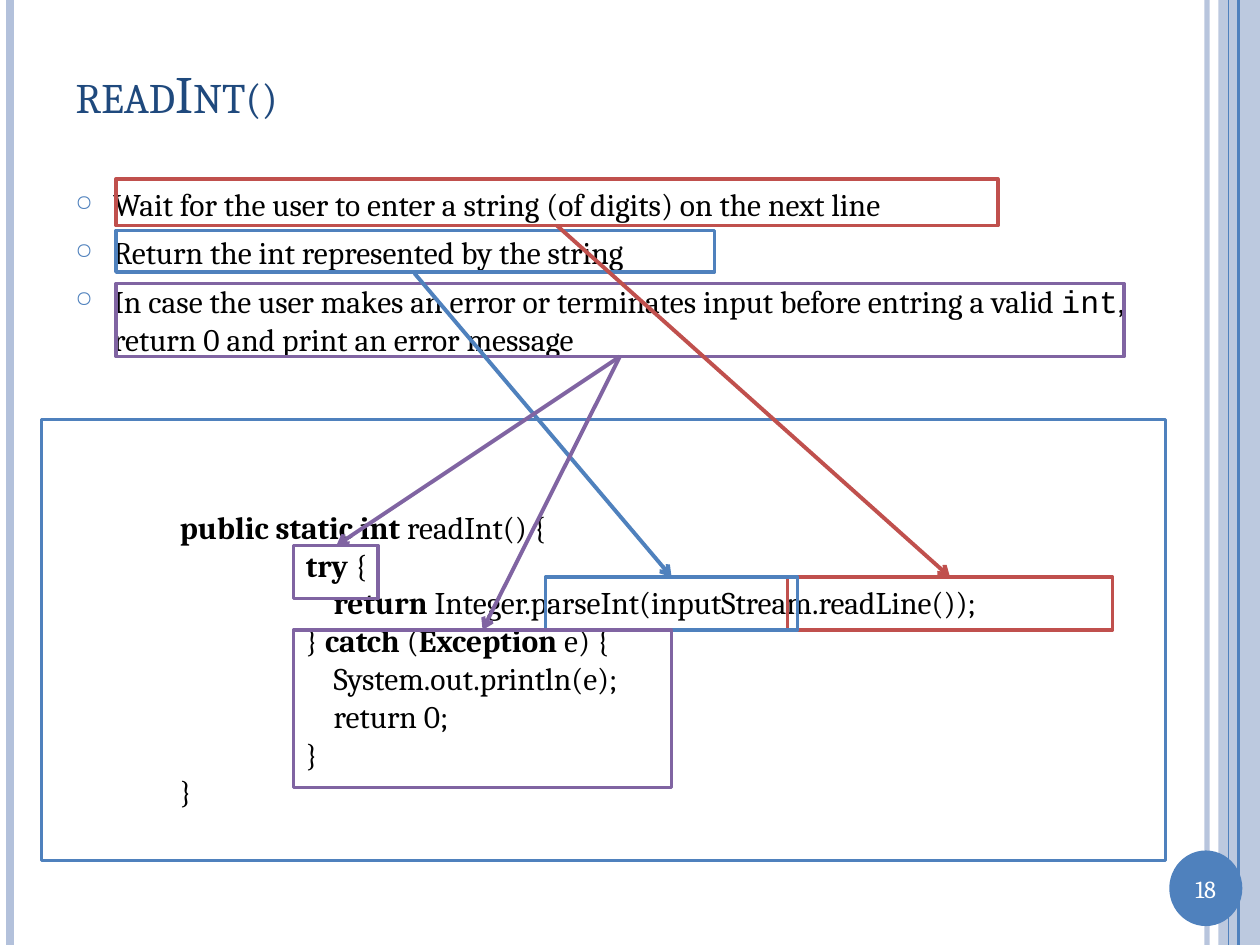
from lxml import etree
from pptx import Presentation
from pptx.dml.color import RGBColor
from pptx.enum.shapes import MSO_CONNECTOR, MSO_SHAPE
from pptx.enum.text import MSO_ANCHOR, PP_ALIGN
from pptx.oxml.ns import qn
from pptx.util import Inches, Pt

RECT, OVAL = MSO_SHAPE.RECTANGLE, MSO_SHAPE.OVAL
STRAIGHT = MSO_CONNECTOR.STRAIGHT
LEFT, CENTER = PP_ALIGN.LEFT, PP_ALIGN.CENTER
MIDDLE = MSO_ANCHOR.MIDDLE
BLUE, RED, PURPLE, PALE = "4F81BD", "C0504D", "8064A2", "B3C1DB"
NAVY, BLACK, WHITE = "1F497D", "000000", "FFFFFF"
FONT, MONO = "Cambria", "Courier New"


def paint(target, color, alpha=None):
    """Give a fill a solid hex colour, optionally with an opacity in percent."""
    target.solid()
    target.fore_color.rgb = RGBColor.from_string(color)
    if alpha:
        clr = target._xPr.find(qn("a:solidFill"))[0]
        etree.SubElement(clr, qn("a:alpha")).set("val", str(alpha * 1000))


def add_runs(p, runs, size, color):
    """Add (text, font name, bold) runs to a paragraph."""
    for text, name, bold in runs:
        r = p.add_run()
        r.text = text
        r.font.name, r.font.size, r.font.bold = name, Pt(size), bold
        paint(r.font.fill, color)


prs = Presentation()
prs.slide_width, prs.slide_height = Inches(10), Inches(7.5)
s = prs.slides.add_slide(prs.slide_layouts[5])
shapes = s.shapes

# Title
title = shapes.title
title.left, title.top = Inches(0.5), Inches(0.3)
title.width, title.height = Inches(8.67), Inches(0.87)
tf = title.text_frame
tf.vertical_anchor = MIDDLE
p = tf.paragraphs[0]
p.alignment = LEFT
add_runs(p, [("readInt()", FONT, False)], 30, NAVY)
p.runs[0].font._element.set("cap", "small")

# Side stripes and page number
band = shapes.add_shape(RECT, Inches(9.67), 0, Inches(0.33), prs.slide_height)
band.shadow.inherit = False
paint(band.fill, PALE, 87)
band.line.fill.background()

stripes = [(9.58, PALE, 3, 93), (0.08, PALE, 4.5, None),
           (9.83, BLUE, 1.5, None), (9.75, BLUE, 0.75, None)]
for x, color, width, alpha in stripes:
    stripe = shapes.add_connector(STRAIGHT, Inches(x), 0, Inches(x), prs.slide_height)
    paint(stripe.line.fill, color, alpha)
    stripe.line.width = Pt(width)
    etree.SubElement(stripe._element.spPr, qn("a:effectLst"))

badge = shapes.add_shape(OVAL, Inches(9.28), Inches(6.75), Inches(0.58), Inches(0.6))
badge.shadow.inherit = False
paint(badge.fill, BLUE)
badge.line.fill.background()
tf = badge.text_frame
tf.margin_left = tf.margin_right = 0
tf.vertical_anchor = MIDDLE
p = tf.paragraphs[0]
p.alignment = CENTER
add_runs(p, [("18", FONT, False)], 14, WHITE)

# Bullets
bullets = [
    [("Wait for the user to enter a string (of digits) on the next line", FONT, False)],
    [("Return the int represented by the string", FONT, False)],
    [("In case the user makes an error or terminates input before entring a valid ",
      FONT, False),
     ("int", MONO, False),
     (", return 0 and print an error message", FONT, False)],
]
body = shapes.add_textbox(Inches(0.5), Inches(1.42), Inches(8.67), Inches(1.5))
tf = body.text_frame
tf.word_wrap = True
for i, runs in enumerate(bullets):
    p = tf.add_paragraph() if i else tf.paragraphs[0]
    p.space_before = Pt(6)
    add_runs(p, runs, 18, BLACK)
    pPr = p._p.get_or_add_pPr()
    pPr.set("marL", str(Inches(0.3)))
    pPr.set("indent", str(-Inches(0.3)))
    bullet_color = etree.SubElement(pPr, qn("a:buClr"))
    etree.SubElement(bullet_color, qn("a:srgbClr")).set("val", BLUE)
    etree.SubElement(pPr, qn("a:buSzPct")).set("val", "70000")
    etree.SubElement(pPr, qn("a:buChar")).set("char", "○")

# Code listing: indent in inches, then (text, bold) pieces
code = [
    (1, [("public static int", True), (" readInt() {", False)]),
    (2, [("try", True), (" {", False)]),
    (2.22, [("return", True), (" Integer.parseInt(inputStream.readLine());", False)]),
    (2, [("} ", False), ("catch", True), (" (", False), ("Exception", True),
         (" e) {", False)]),
    (2.22, [("System.out.println(e);", False)]),
    (2.22, [("return 0;", False)]),
    (2, [("}", False)]),
    (1, [("}", False)]),
]
listing = shapes.add_shape(RECT, Inches(0.33), Inches(3.33), Inches(8.92), Inches(3.5))
listing.shadow.inherit = False
paint(listing.fill, WHITE)
paint(listing.line.fill, BLUE)
listing.line.width = Pt(2)
tf = listing.text_frame
tf.vertical_anchor = MIDDLE
tf.margin_top = Inches(0.35)
for i, (indent, pieces) in enumerate(code):
    p = tf.add_paragraph() if i else tf.paragraphs[0]
    p.alignment = LEFT
    p._p.get_or_add_pPr().set("marL", str(Inches(indent)))
    add_runs(p, [(text, FONT, bold) for text, bold in pieces], 18, BLACK)

# Frames around matching bullets and code
frames = [
    (0.92, 1.83, 4.75, 0.33, BLUE),
    (0.92, 1.42, 7, 0.37, RED),
    (6.25, 4.58, 2.58, 0.42, RED),
    (4.33, 4.58, 2, 0.42, BLUE),
    (0.92, 2.25, 8, 0.58, PURPLE),
    (2.33, 4.33, 0.67, 0.42, PURPLE),
    (2.33, 5, 3, 1.25, PURPLE),
]
for *box, color in frames:
    frame = shapes.add_shape(RECT, *map(Inches, box))
    frame.shadow.inherit = False
    frame.fill.background()
    paint(frame.line.fill, color)
    frame.line.width = Pt(2)

# Arrows from each bullet to its code
arrows = [
    (4.42, 1.79, 7.54, 4.58, RED),
    (3.29, 2.17, 5.33, 4.58, BLUE),
    (4.92, 2.83, 2.67, 4.33, PURPLE),
    (4.92, 2.83, 3.83, 5, PURPLE),
]
for *ends, color in arrows:
    arrow = shapes.add_connector(STRAIGHT, *map(Inches, ends))
    paint(arrow.line.fill, color)
    arrow.line.width = Pt(2.25)
    etree.SubElement(arrow.line._get_or_add_ln(), qn("a:tailEnd")).set("type", "arrow")
    etree.SubElement(arrow._element.spPr, qn("a:effectLst"))

prs.save("out.pptx")
